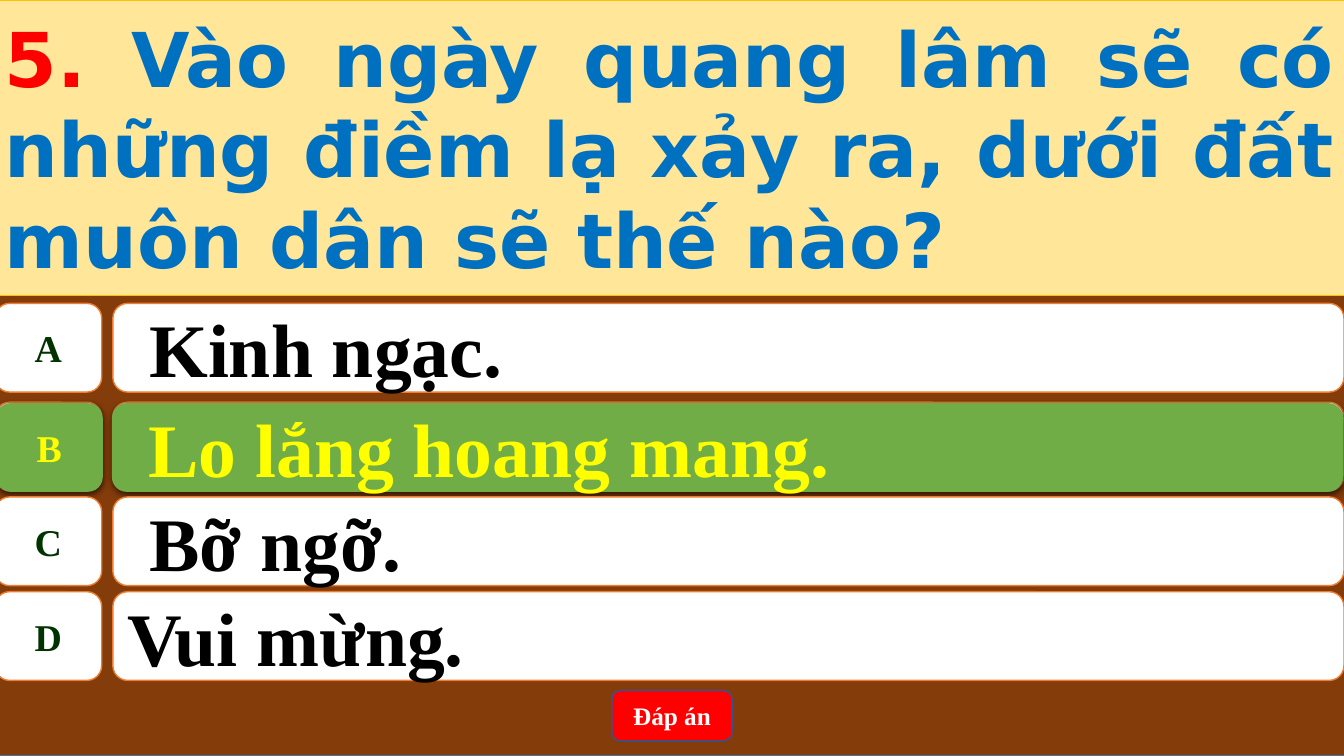
from lxml.etree import SubElement
from pptx import Presentation
from pptx.dml.color import RGBColor
from pptx.enum.shapes import MSO_SHAPE as Shape
from pptx.enum.text import MSO_ANCHOR as Anchor, PP_ALIGN as Align
from pptx.oxml.ns import qn
from pptx.util import Inches, Pt

BROWN = RGBColor(0x84, 0x3C, 0x0B)
STEEL = RGBColor(0x43, 0x73, 0x9E)
NAVY = RGBColor(0x32, 0x54, 0x91)
CREAM = RGBColor(0xFF, 0xE6, 0x99)
GOLD = RGBColor(0xFF, 0xC0, 0x00)
ORANGE = RGBColor(0xED, 0x7D, 0x31)
GREEN = RGBColor(0x70, 0xAD, 0x47)
DARK_GREEN = RGBColor(0x00, 0x33, 0x00)
BLUE = RGBColor(0x00, 0x70, 0xC0)
RED = RGBColor(0xFF, 0x00, 0x00)
YELLOW = RGBColor(0xFF, 0xFF, 0x00)
BLACK = RGBColor(0x00, 0x00, 0x00)
WHITE = RGBColor(0xFF, 0xFF, 0xFF)

SERIF, SANS = "Times New Roman", "DejaVu Sans"

# Places are percentages of the slide's width and height
EDGE, FULL_WIDTH = -0.38, 100.45
TAB_LEFT, TAB_WIDTH = EDGE, 7.95
BAR_LEFT, BAR_WIDTH = 8.4, 91.6
ROW_HEIGHT = 11.73
ANSWERS = [
    # letter, answer, top, indented, correct
    ("A", "Kinh ngạc.", 40.13, True, False),
    ("B", "Lo lắng hoang mang.", 53.2, True, True),
    ("C", "Bỡ ngỡ.", 65.73, True, False),
    ("D", "Vui mừng.", 78.27, False, False),
]


class QuizPage:
    def __init__(self, deck):
        self.width, self.height = deck.slide_width, deck.slide_height
        self.page = deck.slides.add_slide(deck.slide_layouts[6])

    def panel(self, kind, left, top, width, height, fill, line=None, weight=1):
        box = self.page.shapes.add_shape(
            kind, round(self.width * left / 100), round(self.height * top / 100),
            round(self.width * width / 100), round(self.height * height / 100))
        box.shadow.inherit = False
        box.fill.solid()
        box.fill.fore_color.rgb = fill
        if line is None:
            box.line.fill.background()
        else:
            box.line.color.rgb = line
            box.line.width = Pt(weight)
        return box

    def label(self, box, spans, size, font=SERIF, align=Align.LEFT, wrap=True):
        frame = box.text_frame
        frame.word_wrap = wrap
        frame.vertical_anchor = Anchor.MIDDLE
        para = frame.paragraphs[0]
        para.alignment = align
        for text, color in spans:
            span = para.add_run()
            span.text = text
            span.font.name, span.font.size = font, Pt(size)
            span.font.bold = True
            span.font.color.rgb = color
        return para

    def indent(self, para):
        para.level = 1
        properties = para._p.get_or_add_pPr()
        properties.set("marL", str(Inches(0.5)))
        properties.set("indent", str(Inches(-0.28)))

    def drop_shadow(self, box):
        effects = box.element.spPr.find(qn("a:effectLst"))
        shadow = SubElement(effects, qn("a:outerShdw"), blurRad=str(Pt(4.5)),
                            dist=str(Pt(1.5)), dir="5400000", algn="ctr",
                            rotWithShape="0")
        color = SubElement(shadow, qn("a:srgbClr"), val=str(BLACK))
        SubElement(color, qn("a:alpha"), val="63000")

    def row_plates(self, top, fill, line=None, tab_shift=0, bar_shift=0):
        tab = self.panel(Shape.FLOWCHART_ALTERNATE_PROCESS, TAB_LEFT + tab_shift,
                         top, TAB_WIDTH, ROW_HEIGHT, fill, line)
        bar = self.panel(Shape.ROUNDED_RECTANGLE, BAR_LEFT + bar_shift,
                         top, BAR_WIDTH, ROW_HEIGHT, fill, line)
        return tab, bar

    def answer(self, letter, text, top, indented, correct):
        tab, bar = self.row_plates(top, WHITE, ORANGE)
        if correct:
            # The green row leaves a thin orange rim of the plates below
            tab, bar = self.row_plates(top + 0.13, GREEN, None, 0.08, -0.07)
            self.drop_shadow(tab)
            self.drop_shadow(bar)
        self.label(tab, [(letter, YELLOW if correct else DARK_GREEN)], 27,
                   align=Align.CENTER, wrap=False)
        para = self.label(bar, [(text, YELLOW if correct else BLACK)], 54)
        if indented:
            self.indent(para)


def main():
    deck = Presentation()
    deck.slide_width, deck.slide_height = Inches(13.33), Inches(7.5)
    quiz = QuizPage(deck)

    # Backdrop
    quiz.panel(Shape.RECTANGLE, EDGE, 0, FULL_WIDTH, 100, BROWN, STEEL)

    # Question
    question = quiz.panel(Shape.RECTANGLE, EDGE, 0, FULL_WIDTH, 39.07,
                          CREAM, GOLD, 0.5)
    quiz.label(question, [
        ("5. ", RED),
        ("Vào ngày quang lâm sẽ có những điềm lạ xảy ra, "
         "dưới đất muôn dân sẽ thế nào?", BLUE),
    ], 54, SANS, Align.JUSTIFY)

    # Answers
    for row in ANSWERS:
        quiz.answer(*row)

    # Answer button
    button = quiz.panel(Shape.ROUNDED_RECTANGLE, 45.54, 91.33, 8.93, 6.67, RED, NAVY)
    quiz.label(button, [("Đáp án", WHITE)], 18, align=Align.CENTER)

    deck.save("out.pptx")


if __name__ == "__main__":
    main()
